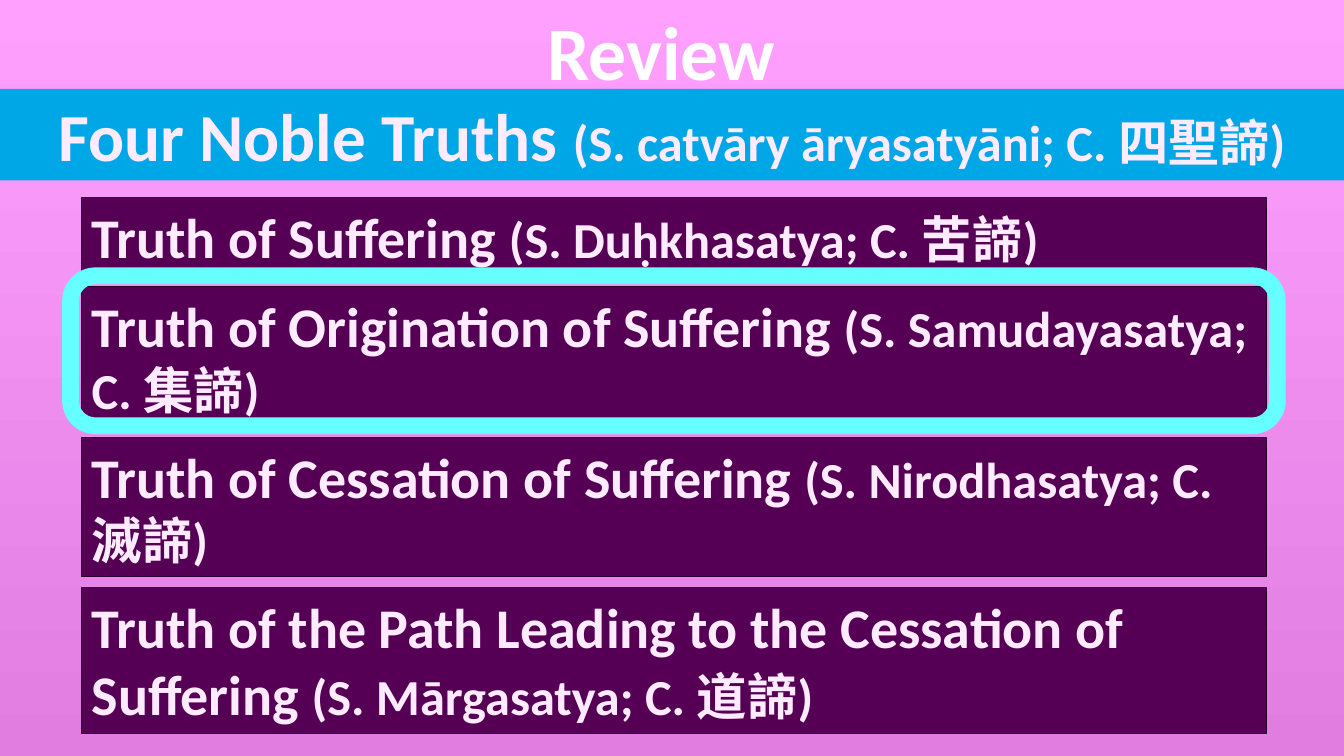
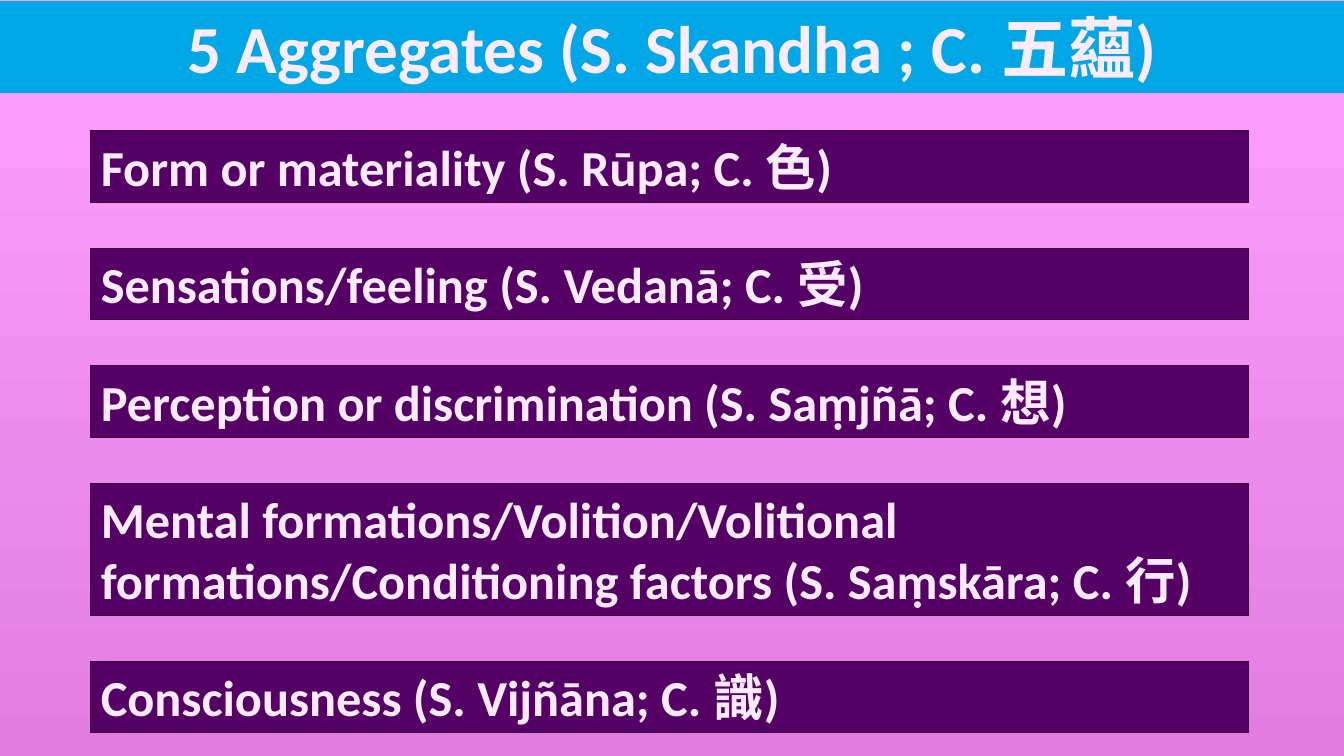
from pptx import Presentation
from pptx.dml.color import RGBColor
from pptx.enum.shapes import MSO_SHAPE
from pptx.enum.text import MSO_ANCHOR, PP_ALIGN
from pptx.util import Cm, Pt

RECTANGLE, ROUNDED = MSO_SHAPE.RECTANGLE, MSO_SHAPE.ROUNDED_RECTANGLE
TOP = MSO_ANCHOR.TOP
LEFT, CENTER = PP_ALIGN.LEFT, PP_ALIGN.CENTER

PINK = RGBColor(0xFF, 0xA0, 0xFF)
ORCHID = RGBColor(0xE1, 0x7D, 0xE1)
BLUE = RGBColor(0x00, 0xA7, 0xE6)
PLUM = RGBColor(0x55, 0x00, 0x55)
PLUM_EDGE = RGBColor(0x2A, 0x00, 0x2A)
VIOLET = RGBColor(0x55, 0x00, 0x64)
VIOLET_EDGE = RGBColor(0x3A, 0x00, 0x3A)
CYAN = RGBColor(0x66, 0xFF, 0xFF)
PALE = RGBColor(0xFF, 0xEB, 0xFF)
WHITE = RGBColor(0xFF, 0xFF, 0xFF)

FONT = "Calibri"
SLIDE_WIDTH, SLIDE_HEIGHT = Cm(33.87), Cm(19.05)
BAND_HEIGHT = Cm(2.31)

REVIEW = "Review"
TRUTHS_BAND = [("Four Noble Truths ", 48), ("(S. catvāry āryasatyāni; C. 四聖諦)", 36)]
TRUTHS = [
    ("Truth of Suffering ", "(S. Duḥkhasatya; C. 苦諦)", 1.96),
    ("Truth of Origination of Suffering ", "(S. Samudayasatya; C. 集諦)", 3.5),
    ("Truth of Cessation of Suffering ", "(S. Nirodhasatya; C. 滅諦)", 3.5),
    ("Truth of the Path Leading to the Cessation of Suffering ",
     "(S. Mārgasatya; C. 道諦)", 3.68),
]
CURRENT_TRUTH = 1

AGGREGATES_BAND = [("5 Aggregates (S. Skandha ; C. 五蘊)", 48)]
AGGREGATES = [
    ("Form or materiality (S. Rūpa; C. 色)", 1.8),
    ("Sensations/feeling (S. Vedanā; C. 受)", 1.8),
    ("Perception or discrimination (S. Saṃjñā; C. 想)", 1.8),
    ("Mental formations/Volition/Volitional formations/Conditioning factors "
     "(S. Saṃskāra; C. 行)", 3.33),
    ("Consciousness (S. Vijñāna; C. 識)", 1.8),
]


def write(holder, runs, align, color=PALE):
    frame = holder.text_frame
    frame.word_wrap = True
    frame.vertical_anchor = TOP
    paragraph = frame.paragraphs[0]
    paragraph.alignment = align
    paragraph.font.name = FONT
    paragraph.font.bold = True
    paragraph.font.color.rgb = color
    for text, size in runs:
        run = paragraph.add_run()
        run.text = text
        run.font.size = Pt(size)


def add_box(slide, box, fill, edge, runs, align=LEFT):
    panel = slide.shapes.add_shape(RECTANGLE, *box)
    panel.shadow.inherit = False
    panel.fill.solid()
    panel.fill.fore_color.rgb = fill
    if edge is None:
        panel.line.fill.background()
    else:
        panel.line.color.rgb = edge
        panel.line.width = Pt(0.75)
    write(panel, runs, align)
    return panel


def add_rows(slide, rows, left, top, width, gap, fill, edge):
    panels = []
    for runs, height in rows:
        box = (left, top, width, Cm(height))
        panels.append(add_box(slide, box, fill, edge, runs))
        top += Cm(height) + gap
    return panels


def add_slide(deck, band_runs, band_top):
    slide = deck.slides.add_slide(deck.slide_layouts[6])
    backdrop = slide.background.fill
    backdrop.gradient()
    backdrop.gradient_angle = 270
    for stop, color, position in zip(backdrop.gradient_stops, (PINK, ORCHID), (0, 1)):
        stop.color.rgb = color
        stop.position = position
    add_box(slide, (0, band_top, SLIDE_WIDTH, BAND_HEIGHT), BLUE, None, band_runs, CENTER)
    return slide


def add_highlight(slide, panel):
    margin = Cm(0.28)
    ring = slide.shapes.add_shape(
        ROUNDED, panel.left - margin, panel.top - margin,
        panel.width + 2 * margin, panel.height + margin)
    ring.shadow.inherit = False
    ring.fill.background()
    ring.line.color.rgb = CYAN
    ring.line.width = Pt(12)


def build_truths(deck):
    slide = add_slide(deck, TRUTHS_BAND, Cm(2.24))
    rows = [([(name, 40), (terms, 36)], height) for name, terms, height in TRUTHS]
    panels = add_rows(slide, rows, Cm(2.06), Cm(4.98), Cm(29.85), Cm(0.29), PLUM, PLUM_EDGE)
    heading = slide.shapes.add_textbox(Cm(9.32), 0, Cm(14.68), Cm(2.57))
    write(heading, [(REVIEW, 54)], CENTER, WHITE)
    add_highlight(slide, panels[CURRENT_TRUTH])


def build_aggregates(deck):
    slide = add_slide(deck, AGGREGATES_BAND, Cm(0.03))
    rows = [([(name, 36)], height) for name, height in AGGREGATES]
    add_rows(slide, rows, Cm(2.29), Cm(3.3), Cm(29.18), Cm(1.16), VIOLET, VIOLET_EDGE)


def main():
    deck = Presentation()
    deck.slide_width, deck.slide_height = SLIDE_WIDTH, SLIDE_HEIGHT
    build_truths(deck)
    build_aggregates(deck)
    deck.save("out.pptx")


if __name__ == "__main__":
    main()
